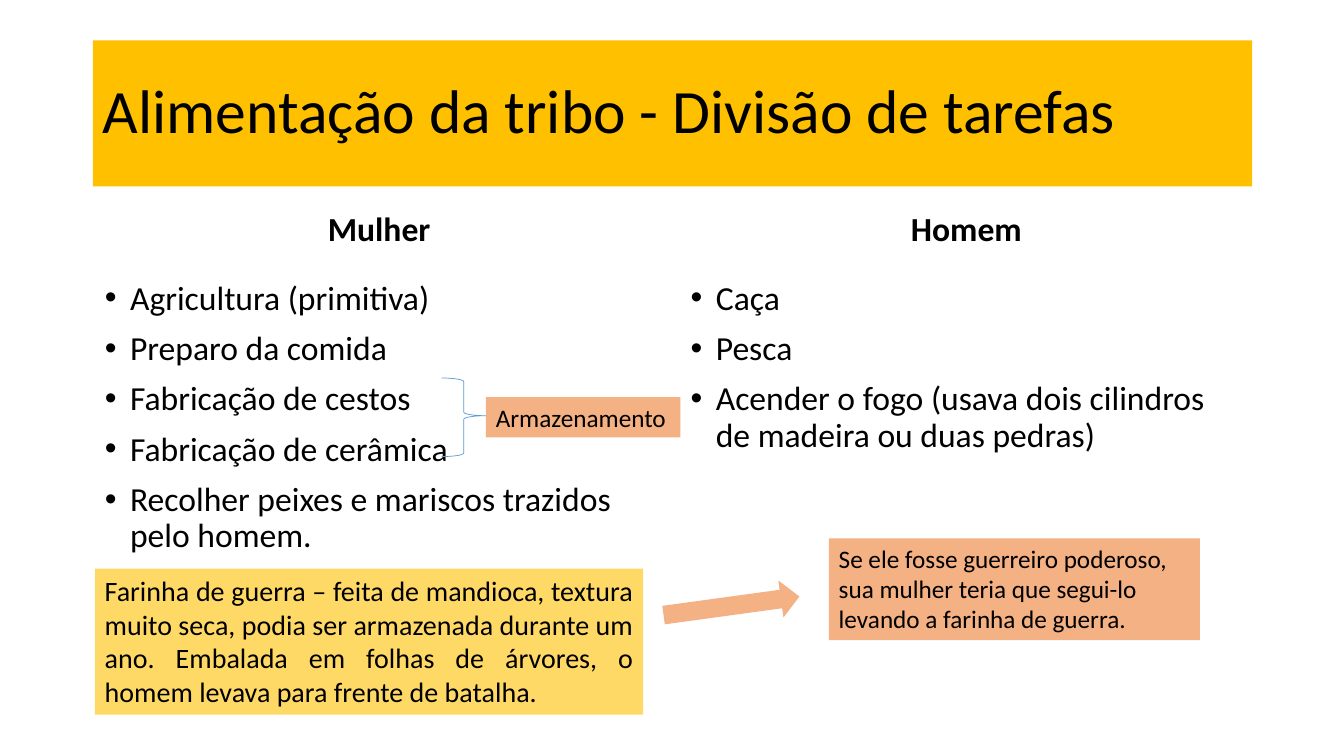
from dataclasses import dataclass

from lxml.etree import SubElement
from pptx import Presentation
from pptx.dml.color import RGBColor
from pptx.enum.shapes import MSO_SHAPE
from pptx.enum.text import MSO_ANCHOR, MSO_AUTO_SIZE, PP_ALIGN
from pptx.oxml.ns import qn
from pptx.shapes.autoshape import Shape
from pptx.slide import Slide
from pptx.text.text import TextFrame
from pptx.util import Inches, Pt

FONT = "Calibri"
BLACK = RGBColor(0x00, 0x00, 0x00)
AMBER = RGBColor(0xFF, 0xC0, 0x00)
YELLOW = RGBColor(0xFF, 0xD9, 0x66)
ORANGE = RGBColor(0xF4, 0xB1, 0x83)
BLUE = RGBColor(0x5B, 0x9B, 0xD5)

COMPARISON_LAYOUT = 4
COLUMN_TOP = 1.84
HEADING_HEIGHT = 0.9


@dataclass(frozen=True)
class Box:
    left: float
    top: float
    width: float
    height: float


@dataclass(frozen=True)
class Column:
    heading_index: int
    heading: str
    left: float
    heading_width: float
    list_width: float
    list_height: float
    tasks: tuple[str, ...]


@dataclass(frozen=True)
class Note:
    box: Box
    fill: RGBColor
    size: int
    alignment: PP_ALIGN
    text: str


COLUMNS = (
    Column(1, "Mulher", 0.94, 5.64, 5.62, 2.97, (
        "Agricultura (primitiva)",
        "Preparo da comida",
        "Fabricação de cestos",
        "Fabricação de cerâmica",
        "Recolher peixes e mariscos trazidos pelo homem.",
    )),
    Column(3, "Homem", 6.75, 5.67, 5.67, 2.17, (
        "Caça",
        "Pesca",
        "Acender o fogo (usava dois cilindros de madeira ou duas pedras)",
    )),
)

NOTES = (
    Note(Box(4.82, 3.94, 1.93, 0.4), ORANGE, 18, PP_ALIGN.LEFT, "Armazenamento"),
    Note(Box(0.94, 5.64, 5.44, 1.45), YELLOW, 20, PP_ALIGN.JUSTIFY,
         "Farinha de guerra – feita de mandioca, textura muito seca, podia ser "
         "armazenada durante um ano. Embalada em folhas de árvores, o homem "
         "levava para frente de batalha."),
    Note(Box(8.22, 5.34, 3.68, 1.01), ORANGE, 18, PP_ALIGN.LEFT,
         "Se ele fosse guerreiro poderoso, sua mulher teria que segui-lo "
         "levando a farinha de guerra."),
)


def place(shape: Shape, box: Box) -> None:
    shape.left, shape.top = Inches(box.left), Inches(box.top)
    shape.width, shape.height = Inches(box.width), Inches(box.height)


def write(frame: TextFrame, texts: tuple[str, ...], size: int, anchor: MSO_ANCHOR,
          alignment: PP_ALIGN = PP_ALIGN.LEFT, bold: bool = False,
          line_spacing: float = 1.0, space_before: int = 0) -> None:
    frame.word_wrap = True
    frame.auto_size = MSO_AUTO_SIZE.NONE
    frame.vertical_anchor = anchor
    for number, text in enumerate(texts):
        paragraph = frame.add_paragraph() if number else frame.paragraphs[0]
        paragraph.alignment = alignment
        paragraph.line_spacing = line_spacing
        paragraph.space_before = Pt(space_before)
        run = paragraph.add_run()
        run.text = text
        run.font.name = FONT
        run.font.size = Pt(size)
        run.font.bold = bold
        run.font.color.rgb = BLACK


def add_bullets(frame: TextFrame) -> None:
    for paragraph in frame.paragraphs:
        properties = paragraph._p.get_or_add_pPr()
        properties.set("marL", str(Inches(0.25)))
        properties.set("indent", str(Inches(-0.25)))
        SubElement(properties, qn("a:buFont"), typeface="Arial")
        SubElement(properties, qn("a:buChar"), char="•")


def fill_title(slide: Slide) -> None:
    title = slide.shapes.title
    place(title, Box(0.92, 0.4, 11.5, 1.45))
    title.fill.solid()
    title.fill.fore_color.rgb = AMBER
    write(title.text_frame, ("Alimentação da tribo - Divisão de tarefas",), 44,
          MSO_ANCHOR.MIDDLE, line_spacing=0.9)


def fill_column(slide: Slide, column: Column) -> None:
    heading = slide.placeholders[column.heading_index]
    place(heading, Box(column.left, COLUMN_TOP, column.heading_width, HEADING_HEIGHT))
    write(heading.text_frame, (column.heading,), 24, MSO_ANCHOR.MIDDLE,
          PP_ALIGN.CENTER, True, 0.9, 10)
    task_list = slide.placeholders[column.heading_index + 1]
    place(task_list, Box(column.left, COLUMN_TOP + HEADING_HEIGHT,
                         column.list_width, column.list_height))
    write(task_list.text_frame, column.tasks, 24, MSO_ANCHOR.TOP,
          line_spacing=0.9, space_before=10)
    add_bullets(task_list.text_frame)


def add_plain_shape(slide: Slide, kind: MSO_SHAPE, box: Box,
                    fill: RGBColor | None = None) -> Shape:
    shape = slide.shapes.add_shape(kind, Inches(box.left), Inches(box.top),
                                   Inches(box.width), Inches(box.height))
    shape.shadow.inherit = False
    shape.line.fill.background()
    if fill is None:
        shape.fill.background()
    else:
        shape.fill.solid()
        shape.fill.fore_color.rgb = fill
    return shape


def add_brace(slide: Slide) -> None:
    brace = add_plain_shape(slide, MSO_SHAPE.RIGHT_BRACE, Box(4.38, 3.75, 0.44, 0.78))
    brace.adjustments[0] = 0.08
    brace.adjustments[1] = 0.48
    brace.line.color.rgb = BLUE
    brace.line.width = Pt(0.5)


def add_note(slide: Slide, note: Note) -> None:
    shape = add_plain_shape(slide, MSO_SHAPE.RECTANGLE, note.box, note.fill)
    write(shape.text_frame, (note.text,), note.size, MSO_ANCHOR.TOP, note.alignment)


def main() -> None:
    presentation = Presentation()
    presentation.slide_width = Inches(13.33)
    presentation.slide_height = Inches(7.5)
    slide = presentation.slides.add_slide(presentation.slide_layouts[COMPARISON_LAYOUT])
    fill_title(slide)
    for column in COLUMNS:
        fill_column(slide, column)
    add_brace(slide)
    for note in NOTES:
        add_note(slide, note)
    arrow = add_plain_shape(slide, MSO_SHAPE.DOWN_ARROW, Box(7.07, 5.33, 0.37, 1.36), ORANGE)
    arrow.rotation = 262.2
    presentation.save("out.pptx")


if __name__ == "__main__":
    main()
